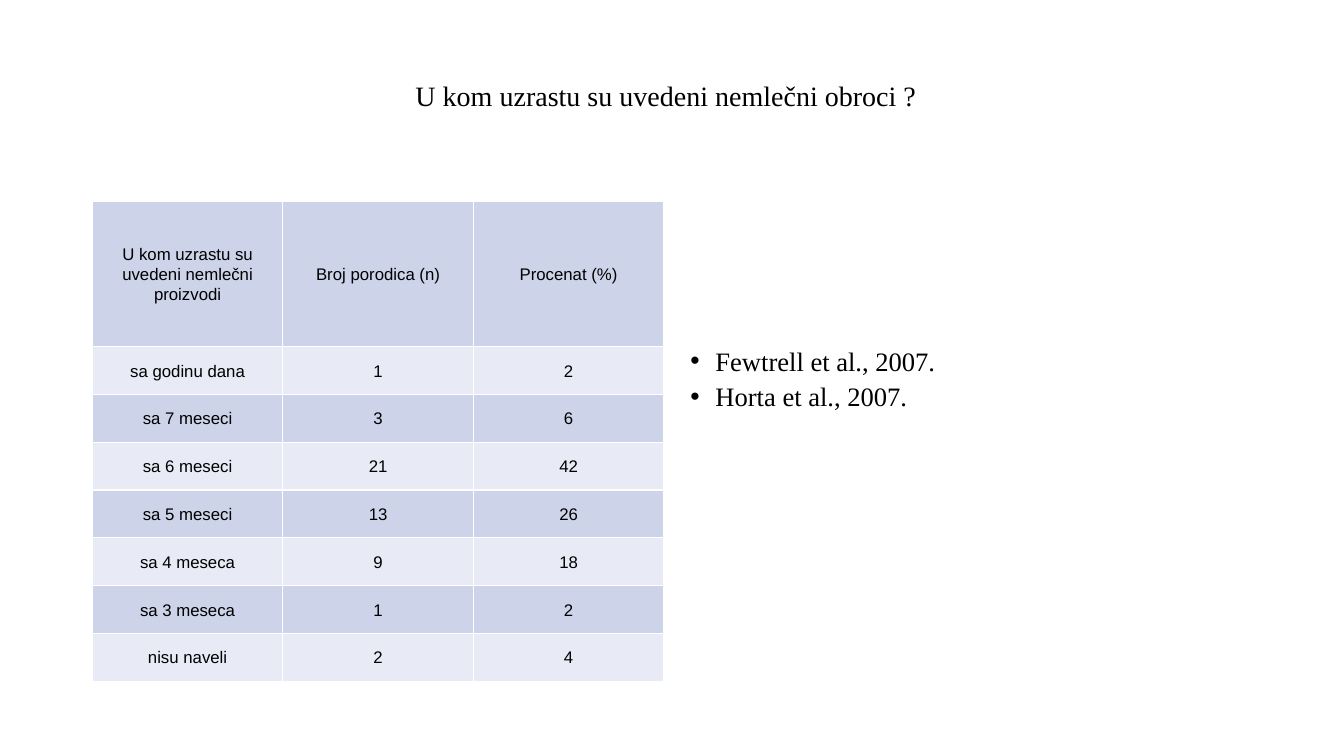
"""Build a slide with a table of ages at first solid meals and two sources."""
from dataclasses import dataclass

import pptx
import pptx.dml.color
import pptx.enum.text
import pptx.oxml
import pptx.oxml.ns
import pptx.util

Pt = pptx.util.Pt
Align = pptx.enum.text.PP_ALIGN
Anchor = pptx.enum.text.MSO_ANCHOR
SERIF = "Times New Roman"
NS = pptx.oxml.ns.nsdecls("a")


@dataclass
class Box:
    left: float
    top: float
    width: float
    height: float


@dataclass
class Row:
    age: str
    count: str
    share: str
    height: float = 34.15


ROWS = [
    Row("U kom uzrastu su uvedeni nemlečni proizvodi", "Broj porodica (n)",
        "Procenat (%)", 103.68),
    Row("sa godinu dana", "1", "2"),
    Row("sa 7 meseci", "3", "6"),
    Row("sa 6 meseci", "21", "42"),
    Row("sa 5 meseci", "13", "26"),
    Row("sa 4 meseca", "9", "18"),
    Row("sa 3 meseca", "1", "2"),
    Row("nisu naveli", "2", "4"),
]
BANDS = ["CDD4EA", "E8EBF5"]
SOURCES = ["Fewtrell et al., 2007.", "Horta et al., 2007."]


def color(code: str) -> pptx.dml.color.RGBColor:
    return pptx.dml.color.RGBColor.from_string(code)


def write(para, text: str, *, size: float, font: str = SERIF, align=Align.LEFT,
          line: float = 1.07, after: float = 0, left: float = 0,
          hang: float = 0, bullet: str = "") -> None:
    run = para.add_run()
    run.text = text
    run.font.size = Pt(size)
    run.font.name = font
    run.font.color.rgb = color("000000")
    para.alignment = align
    para.line_spacing = line
    para.space_after = Pt(after)
    props = para._p.get_or_add_pPr()
    props.set("marL", str(Pt(left)))
    props.set("indent", str(Pt(-hang)))
    if bullet:
        props.append(pptx.oxml.parse_xml(f'<a:buFont {NS} typeface="Arial"/>'))
        props.append(pptx.oxml.parse_xml(f'<a:buChar {NS} char="{bullet}"/>'))


def add_box(slide, box: Box, *, anchor=Anchor.TOP, top: float = 3.6):
    shape = slide.shapes.add_textbox(
        Pt(box.left), Pt(box.top), Pt(box.width), Pt(box.height))
    frame = shape.text_frame
    frame.word_wrap = True
    frame.vertical_anchor = anchor
    frame.margin_top = Pt(top)
    return frame


def edge(cell, code: str, width: float) -> None:
    props = cell._tc.get_or_add_tcPr()
    for side in ("lnL", "lnR", "lnT", "lnB"):
        props.append(pptx.oxml.parse_xml(
            f'<a:{side} {NS} w="{Pt(width)}"><a:solidFill>'
            f'<a:srgbClr val="{code}"/></a:solidFill></a:{side}>'))


def add_grid(slide, box: Box, rows: list[Row]) -> None:
    table = slide.shapes.add_table(
        len(rows), 3, Pt(box.left), Pt(box.top), Pt(box.width),
        Pt(box.height)).table
    table.first_row = False
    table.horz_banding = False
    for column in table.columns:
        column.width = Pt(box.width / 3)
    for i, row in enumerate(rows):
        table.rows[i].height = Pt(row.height)
        for j, text in enumerate((row.age, row.count, row.share)):
            cell = table.cell(i, j)
            edge(cell, "FFFFFF", 1)
            cell.fill.solid()
            cell.fill.fore_color.rgb = color(BANDS[i % 2])
            cell.vertical_anchor = Anchor.MIDDLE
            cell.margin_left = cell.margin_right = Pt(5)
            cell.margin_top = cell.margin_bottom = Pt(0)
            write(cell.text_frame.paragraphs[0], text, size=12, font="Arial",
                  align=Align.CENTER)


def main() -> None:
    deck = pptx.Presentation()
    deck.slide_width, deck.slide_height = Pt(960), Pt(540)
    slide = deck.slides.add_slide(deck.slide_layouts[6])

    title = add_box(slide, Box(66, 28.75, 828, 81.5), anchor=Anchor.MIDDLE)
    write(title.paragraphs[0], "U kom uzrastu su uvedeni nemlečni obroci ?",
          size=20, line=0.9, left=223.7)

    add_grid(slide, Box(66, 144, 408.24, 342.73), ROWS)

    notes = add_box(slide, Box(486, 144, 408.24, 342.73), top=100.6)
    for i, text in enumerate(SOURCES):
        para = notes.add_paragraph() if i else notes.paragraphs[0]
        write(para, text, size=19, align=Align.JUSTIFY, after=1, left=18,
              hang=18.5, bullet="•")

    deck.save("out.pptx")


if __name__ == "__main__":
    main()
